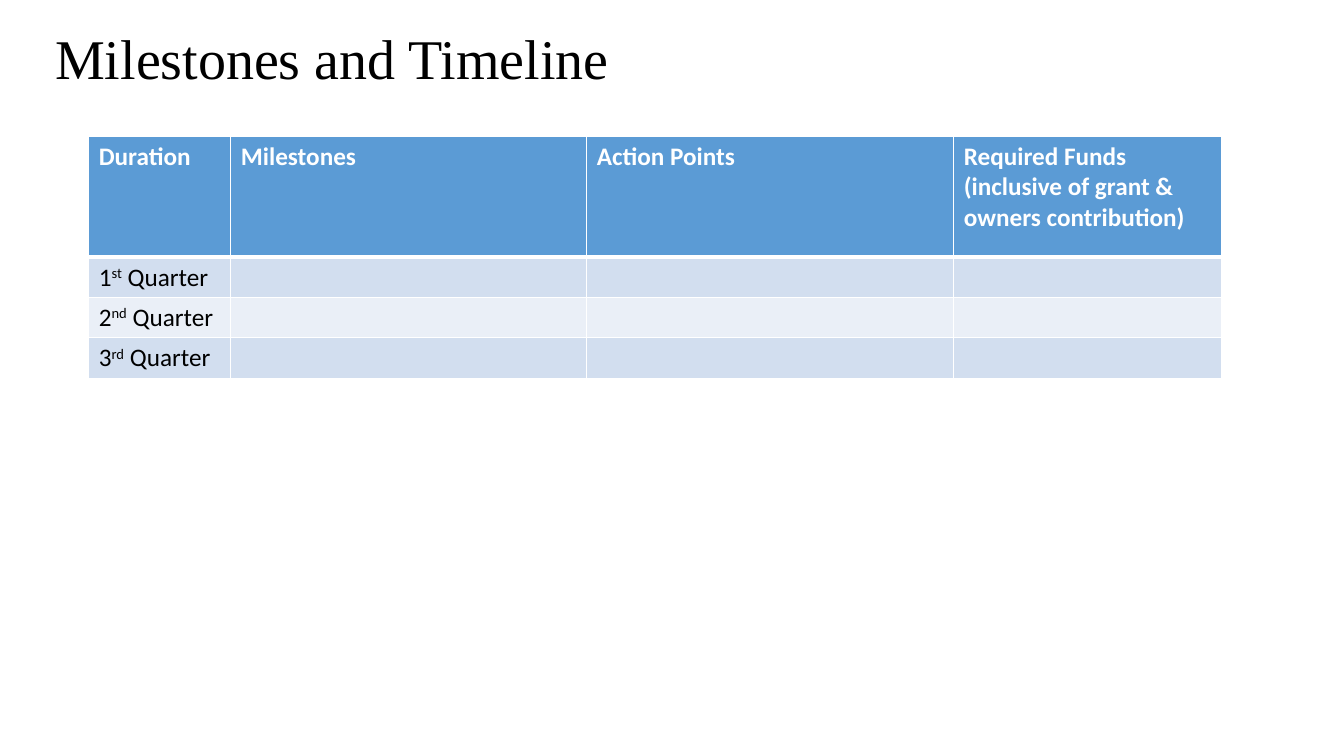
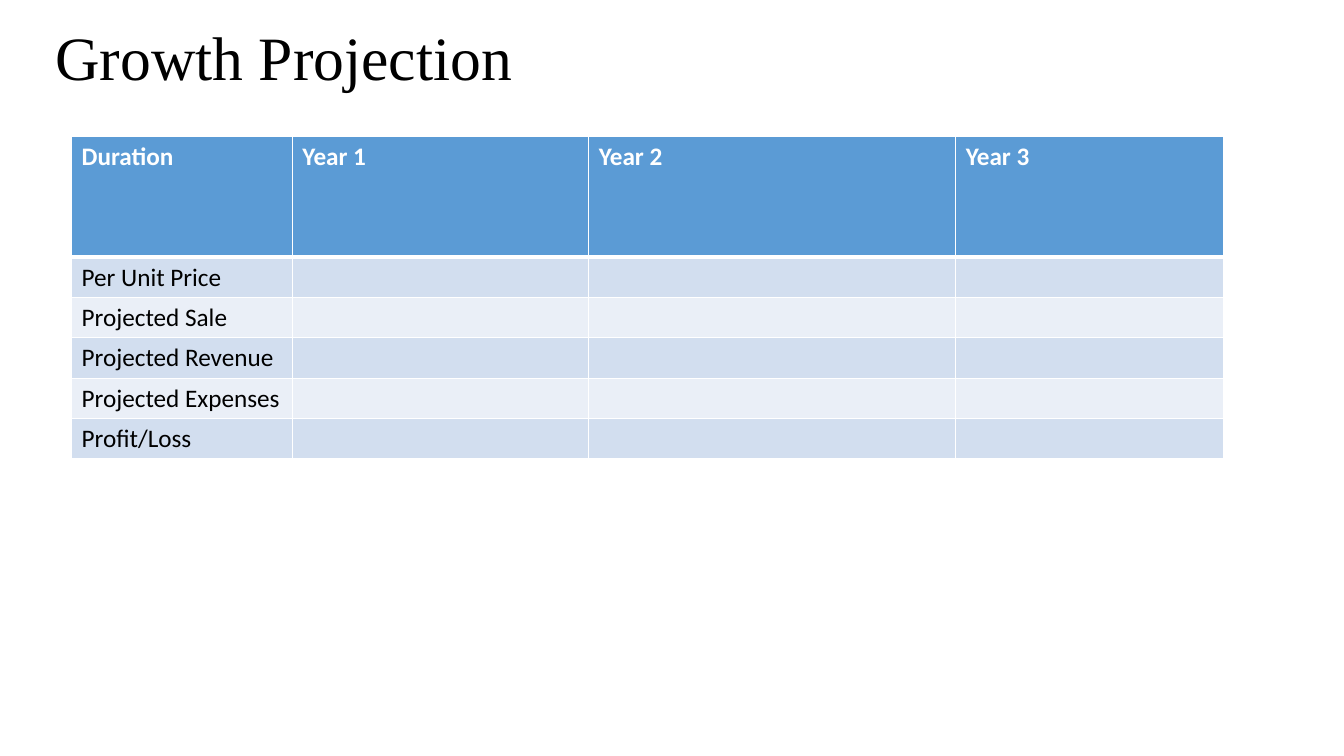
import pptx
import pptx.util
import pptx.dml.color
import pptx.enum.text
import pptx.oxml.ns
import lxml.etree

Inches = pptx.util.Inches
COLORS = {
    "text": "000000",
    "white": "FFFFFF",
    "header": "5B9BD5",
    "odd_row": "D2DEEF",
    "even_row": "EAEFF7",
}
HEADER_HEIGHT = 1.2
ROW_HEIGHT = 0.4

SLIDES = [
    {
        "title": "Milestones and Timeline",
        "title_size": 40,
        "left": 0.88,
        "columns": [1.41, 3.53, 3.64, 2.66],
        "header": [
            "Duration",
            "Milestones",
            "Action Points",
            "Required Funds\n(inclusive of grant & owners contribution)",
        ],
        "labels": ["1^st^ Quarter", "2^nd^ Quarter", "3^rd^ Quarter"],
    },
    {
        "title": "Growth Projection",
        "title_size": 44,
        "left": 0.71,
        "columns": [2.19, 2.94, 3.64, 2.66],
        "header": ["Duration", "Year 1", "Year 2", "Year 3"],
        "labels": [
            "Per Unit Price",
            "Projected Sale",
            "Projected Revenue",
            "Projected Expenses",
            "Profit/Loss",
        ],
    },
]


def write_text(frame, text, font="Calibri", size=18, color="text", bold=False, spacing=None):
    for line_index, line in enumerate(text.split("\n")):
        para = frame.add_paragraph() if line_index else frame.paragraphs[0]
        if spacing:
            para.line_spacing = spacing
        for part_index, part in enumerate(line.split("^")):
            span = para.add_run()
            span.text = part
            span.font.name = font
            span.font.size = pptx.util.Pt(size)
            span.font.bold = bold
            span.font.color.rgb = pptx.dml.color.RGBColor.from_string(COLORS[color])
            if part_index % 2:
                span.font._element.set("baseline", "30000")


def add_border(cell, side, width):
    qn = pptx.oxml.ns.qn
    properties = cell._tc.get_or_add_tcPr()
    line = lxml.etree.SubElement(properties, qn(f"a:ln{side}"), w=str(pptx.util.Pt(width)))
    fill = lxml.etree.SubElement(line, qn("a:solidFill"))
    lxml.etree.SubElement(fill, qn("a:srgbClr"), val=COLORS["white"])


deck = pptx.Presentation()
deck.slide_width = Inches(13.33)
deck.slide_height = Inches(7.5)

for content in SLIDES:
    page = deck.slides.add_slide(deck.slide_layouts[6])

    title_box = page.shapes.add_textbox(Inches(0.45), Inches(0.13), Inches(11.5), Inches(0.95))
    title_box.text_frame.word_wrap = True
    title_box.text_frame.vertical_anchor = pptx.enum.text.MSO_ANCHOR.MIDDLE
    write_text(title_box.text_frame, content["title"], font="Times New Roman",
               size=content["title_size"], spacing=0.9)

    columns = content["columns"]
    labels = content["labels"]
    table = page.shapes.add_table(
        len(labels) + 1, len(columns), Inches(content["left"]), Inches(1.35),
        Inches(sum(columns)), Inches(HEADER_HEIGHT + ROW_HEIGHT * len(labels)),
    ).table
    for column, width in zip(table.columns, columns):
        column.width = Inches(width)

    rows = [content["header"]] + [[label] for label in labels]
    for row_index, texts in enumerate(rows):
        is_header = row_index == 0
        table.rows[row_index].height = Inches(HEADER_HEIGHT if is_header else ROW_HEIGHT)
        band = "header" if is_header else "odd_row" if row_index % 2 else "even_row"
        for column_index in range(len(columns)):
            cell = table.cell(row_index, column_index)
            add_border(cell, "L", 1)
            add_border(cell, "R", 1)
            add_border(cell, "T", 3 if row_index == 1 else 1)
            add_border(cell, "B", 3 if is_header else 1)
            cell.fill.solid()
            cell.fill.fore_color.rgb = pptx.dml.color.RGBColor.from_string(COLORS[band])
            if column_index < len(texts):
                write_text(cell.text_frame, texts[column_index], bold=is_header,
                           color="white" if is_header else "text")

deck.save("out.pptx")
